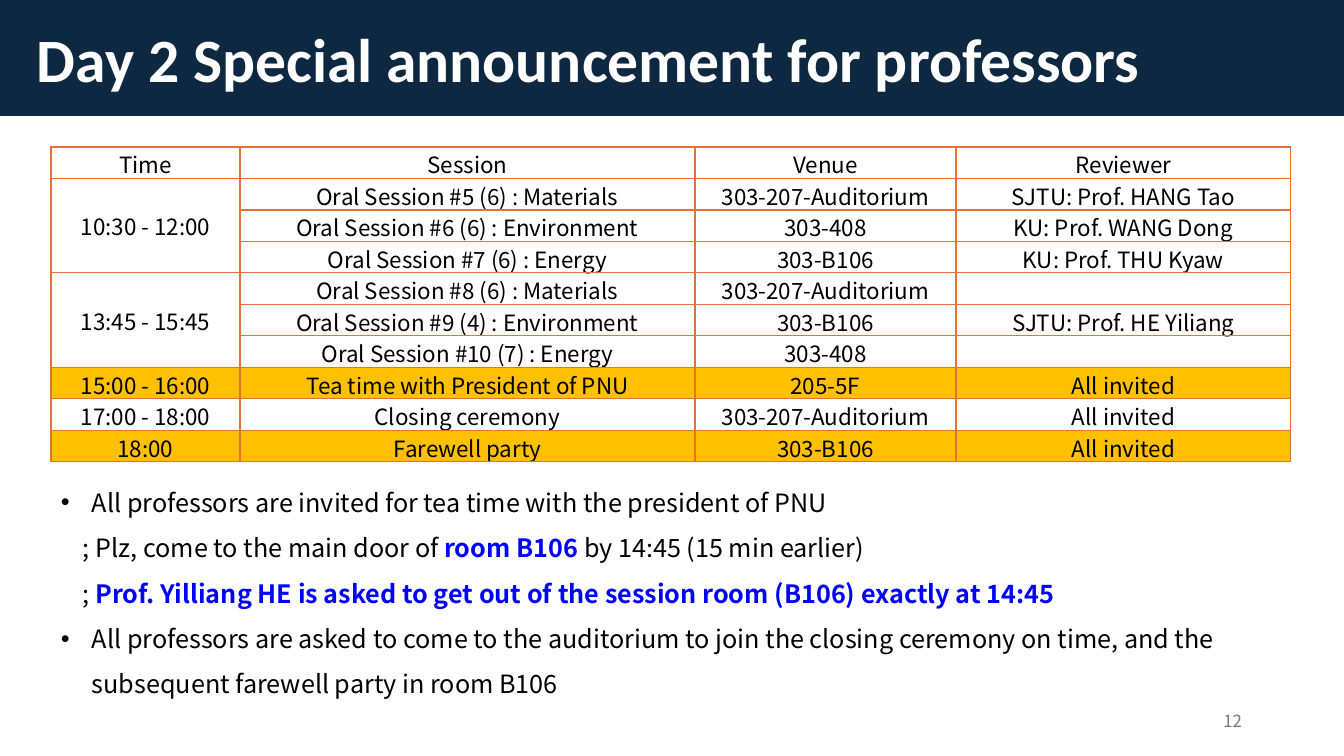
from pptx import Presentation
from pptx import util as u
from pptx.dml.color import RGBColor
from pptx.enum import text
from pptx.oxml import parse_xml
from pptx.oxml.ns import nsdecls

TITLE = "Day 2 Special announcement for professors"
HEADER = ("Time", "Session", "Venue", "Reviewer")
# Time, rows of (session, venue, reviewer), highlighted
SCHEDULE = [
    ("10:30 - 12:00", [
        ("Oral Session #5 (6) : Materials", "303-207-Auditorium", "SJTU: Prof. HANG Tao"),
        ("Oral Session #6 (6) : Environment", "303-408", "KU: Prof. WANG Dong"),
        ("Oral Session #7 (6) : Energy", "303-B106", "KU: Prof. THU Kyaw")], False),
    ("13:45 - 15:45", [
        ("Oral Session #8 (6) : Materials", "303-207-Auditorium", ""),
        ("Oral Session #9 (4) : Environment", "303-B106", "SJTU: Prof. HE Yiliang"),
        ("Oral Session #10 (7) : Energy", "303-408", "")], False),
    ("15:00 - 16:00", [("Tea time with President of PNU", "205-5F", "All invited")], True),
    ("17:00 - 18:00", [("Closing ceremony", "303-207-Auditorium", "All invited")], False),
    ("18:00", [("Farewell party", "303-B106", "All invited")], True),
]
# Bulleted, runs of (text, emphasised)
NOTES = [
    (True, [("All professors are invited for tea time with the president of PNU", False)]),
    (False, [("; Plz, come to the main door of ", False), ("room B106 ", True),
             ("by 14:45 (15 min earlier)", False)]),
    (False, [("; ", False),
             ("Prof. Yilliang HE is asked to get out of the session room (B106) "
              "exactly at 14:45", True)]),
    (True, [("All professors are asked to come to the auditorium to join the closing "
             "ceremony on time, and the subsequent farewell party in room B106", False)]),
]
PAGE = "12"

NAVY, WHITE, BLACK, GRAY = "0E2841", "FFFFFF", "000000", "797979"
BLUE, AMBER, ORANGE = "0000FF", "FFC000", "E97132"
BODY_FONT = "Noto Sans CJK KR"
COLS = (189, 455, 261, 335)
TABLE_X, TABLE_Y, TABLE_H = 51, 147, 315
BULLET_INDENT, SUB_INDENT = 31, 22


def px(n):
    return u.Emu(round(n * 914400 / 100.8))


def rgb(value):
    return RGBColor.from_string(value)


def add_run(p, words, size=16, color=BLACK, bold=False, font=BODY_FONT):
    r = p.add_run()
    r.text = words
    f = r.font
    f.size, f.bold, f.name = u.Pt(size), bold, font
    f.color.rgb = rgb(color)
    ea = parse_xml(f'<a:ea {nsdecls("a")} typeface="{font}"/>')
    r._r.get_or_add_rPr().find("{*}latin").addnext(ea)


def add_text_box(s, x, y, w, h):
    tf = s.shapes.add_textbox(px(x), px(y), px(w), px(h)).text_frame
    tf.word_wrap = True
    return tf


def format_cell(cell, words, fill):
    cell.margin_left = cell.margin_right = cell.margin_top = px(1)
    cell.margin_bottom = 0
    cell.vertical_anchor = text.MSO_ANCHOR.MIDDLE
    if fill:
        cell.fill.solid()
        cell.fill.fore_color.rgb = rgb(fill)
    else:
        cell.fill.background()
    tcPr = cell._tc.get_or_add_tcPr()
    for i, side in enumerate(("lnL", "lnR", "lnT", "lnB")):
        tcPr.insert(i, parse_xml(
            f'<a:{side} {nsdecls("a")} w="12700"><a:solidFill>'
            f'<a:srgbClr val="{ORANGE}"/></a:solidFill></a:{side}>'))
    p = cell.text_frame.paragraphs[0]
    p.alignment = text.PP_ALIGN.CENTER
    if words:
        add_run(p, words)


prs = Presentation()
prs.slide_width, prs.slide_height = px(1344), px(756)
s = prs.slides.add_slide(prs.slide_layouts[5])

# Title band
title = s.shapes.title
title.left, title.top, title.width, title.height = 0, 0, px(1344), px(116)
title.fill.solid()
title.fill.fore_color.rgb = rgb(NAVY)
tf = title.text_frame
tf.margin_left = px(37)
tf.vertical_anchor = text.MSO_ANCHOR.MIDDLE
tf.paragraphs[0].alignment = text.PP_ALIGN.LEFT
add_run(tf.paragraphs[0], TITLE, size=44, color=WHITE, bold=True, font="Calibri")

# Page number
tf = add_text_box(s, 950, 701, 302, 40)
tf.vertical_anchor = text.MSO_ANCHOR.MIDDLE
tf.paragraphs[0].alignment = text.PP_ALIGN.RIGHT
add_run(tf.paragraphs[0], PAGE, size=12, color=GRAY)

# Notes
tf = add_text_box(s, TABLE_X, 467, 1250, 233)
for i, (bulleted, runs) in enumerate(NOTES):
    p = tf.add_paragraph() if i else tf.paragraphs[0]
    p.line_spacing = 1.5
    pPr = p._p.get_or_add_pPr()
    if bulleted:
        pPr.set("marL", str(px(BULLET_INDENT)))
        pPr.set("indent", str(-px(BULLET_INDENT)))
        pPr.append(parse_xml(f'<a:buFont {nsdecls("a")} typeface="Arial"/>'))
        pPr.append(parse_xml(f'<a:buChar {nsdecls("a")} char="•"/>'))
    else:
        pPr.set("marL", str(px(SUB_INDENT)))
    for words, strong in runs:
        add_run(p, words, size=18, color=BLUE if strong else BLACK, bold=strong)

# Schedule table
n_rows = 1 + sum(len(sessions) for _, sessions, _ in SCHEDULE)
table = s.shapes.add_table(n_rows, len(COLS), px(TABLE_X), px(TABLE_Y),
                           px(sum(COLS)), px(TABLE_H)).table
table.first_row = table.horz_banding = False
for col, w in zip(table.columns, COLS):
    col.width = px(w)
rows = [(HEADER, None)]
for time, sessions, highlighted in SCHEDULE:
    first = len(rows)
    for i, session in enumerate(sessions):
        rows.append((("" if i else time, *session), AMBER if highlighted else None))
    if len(sessions) > 1:
        table.cell(first, 0).merge(table.cell(len(rows) - 1, 0))
for i, (values, fill) in enumerate(rows):
    for j, words in enumerate(values):
        format_cell(table.cell(i, j), words, fill)

prs.save("out.pptx")
